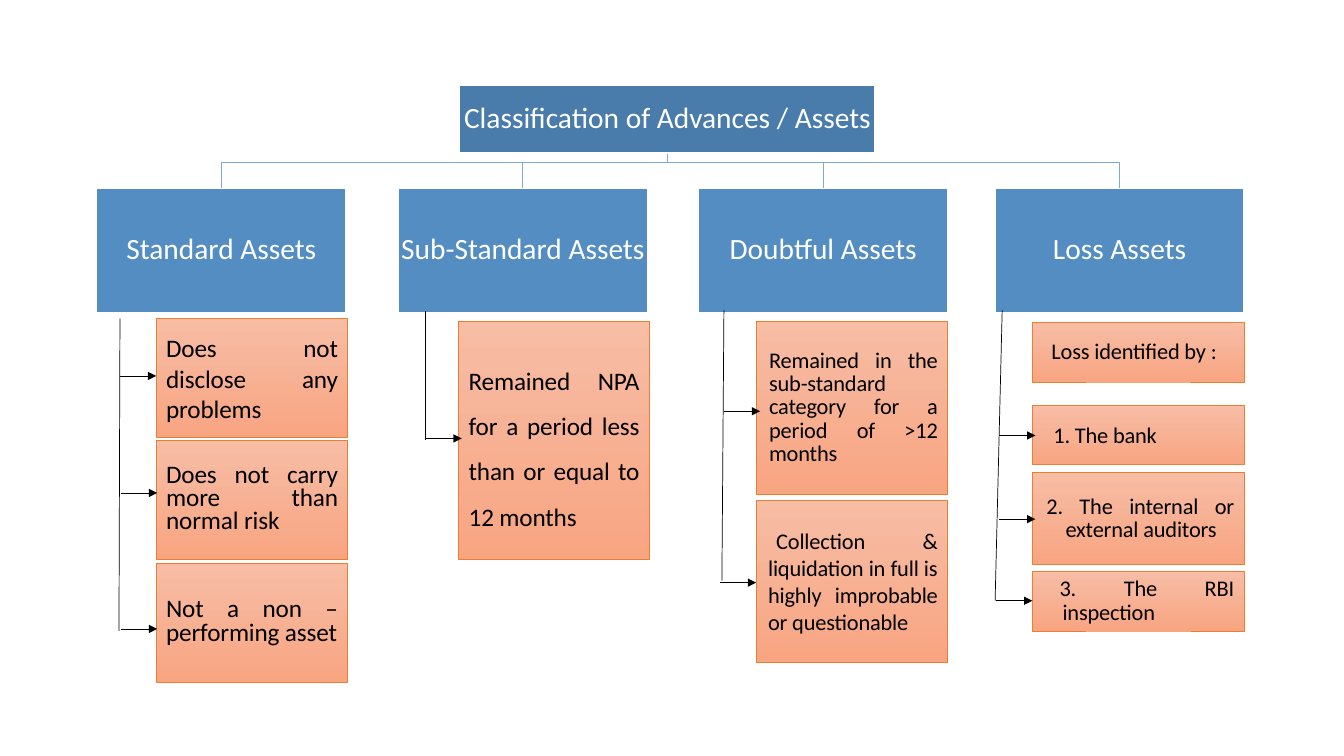
from pptx import Presentation
from pptx import util as u
from pptx.dml.color import RGBColor
from pptx.enum import shapes, text
from lxml import etree

# Content: each card is words, top, height, type size, then paragraph format
ROOT = "Classification of Advances / Assets"
TIGHT = {"line_spacing": u.Pt(16.6), "space_before": u.Pt(6.2)}
LOW = {"line_spacing": u.Pt(16.6), "space_before": u.Pt(8.4)}
COLS = [
    {"name": "Standard Assets", "left": 0.96, "card": (1.55, 1.9),
     "trunk": (1.19, 3.16, 1.18, 6.26),
     "arrows": [(1.19, 3.73), (1.2, 4.89), (1.2, 6.24)],
     "cards": [("Does not disclose any problems", 3.16, 1.18, 18, {}, (0, 0)),
               ("Does not carry more than normal risk", 4.37, 1.18, 18, TIGHT, (0, 0)),
               ("Not a non – performing asset", 5.59, 1.18, 18, TIGHT, (0, 0))]},
    {"name": "Sub-Standard Assets", "left": 3.95, "card": (4.55, 1.89),
     "trunk": (4.22, 3.09, 4.22, 4.37),
     "arrows": [(4.22, 4.35)],
     "cards": [("Remained NPA for a period less than or equal to 12 months", 3.19, 2.36, 18,
                {"line_spacing": 1.5, "space_before": u.Pt(6.2)}, (0, 0))]},
    {"name": "Doubtful Assets", "left": 6.93, "card": (7.5, 1.9),
     "trunk": (7.18, 3.08, 7.16, 5.76),
     "arrows": [(7.18, 4.08), (7.14, 5.78)],
     "cards": [("Remained in the sub-standard category for a period of >12 months", 3.19, 1.71, 16,
                {"line_spacing": u.Pt(16.6)}, (0.03, 0)),
               ("Collection & liquidation in full is highly improbable or questionable",
                4.96, 1.61, 16, {}, (0.02, 0.08))]},
    {"name": "Loss Assets", "left": 9.87, "card": (10.24, 2.1),
     "trunk": (9.94, 3.08, 9.87, 5.96),
     "arrows": [(9.91, 4.32), (9.91, 5.15), (9.88, 5.96)],
     "cards": [("Loss identified by :", 3.2, 0.59, 16, LOW, (0.62, -0.53)),
               ("1. The bank", 4.02, 0.59, 16, {"space_before": u.Pt(14)}, (0.11, 0)),
               ("2. The internal or external auditors", 4.69, 0.91, 16,
                {"line_spacing": u.Pt(16.6), "space_before": u.Pt(4.6)}, (0.23, -0.19)),
               ("3. The RBI inspection", 5.67, 0.59, 16, LOW, (0.2, -0.03))]},
]

# Theme and grid
THEME = {"font": "Calibri", "head": 21, "root": "497CAB", "col": "538DC1",
         "tree": "7AA9DA", "light": "FFFFFF", "dark": "000000",
         "edge": "ED7D31", "shade": ("F7BDA5", "F8A582")}
TOP = (4.56, 0.85, 4.12, 0.67)
ROW, WIDE, HIGH = 1.87, 2.47, 1.23
FORK, REACH = 1.61, 0.36

deck = Presentation()
deck.slide_width, deck.slide_height = u.Inches(13.33), u.Inches(7.5)
slide = deck.slides.add_slide(deck.slide_layouts[6])


def rgb(key):
    return RGBColor.from_string(THEME.get(key, key))


def apply(thing, form):
    for name, value in form.items():
        setattr(thing, name, value)


def edge(line, key, size):
    line.color.rgb = rgb(key)
    line.width = u.Pt(size)


def box(place, words, size, color, inset, form):
    shape = slide.shapes.add_shape(shapes.MSO_SHAPE.RECTANGLE, *map(u.Inches, place))
    shape.shadow.inherit = False
    side, end = map(u.Inches, inset)
    frame = shape.text_frame
    apply(frame, {"word_wrap": True, "vertical_anchor": text.MSO_ANCHOR.MIDDLE,
                  "margin_left": side, "margin_right": side,
                  "margin_top": end, "margin_bottom": end})
    para = frame.paragraphs[0]
    apply(para, form)
    run = para.add_run()
    run.text = words
    apply(run.font, {"name": THEME["font"], "size": u.Pt(size)})
    run.font.color.rgb = rgb(color)
    return shape, para, run


def head(place, words, key):
    shape, _, _ = box(place, words, THEME["head"], "light", (0.01, 0.01),
                      {"alignment": text.PP_ALIGN.CENTER, "line_spacing": 0.9})
    shape.fill.solid()
    shape.fill.fore_color.rgb = rgb(key)
    edge(shape.line, "light", 1)


def card(place, words, size, form, dent):
    shape, para, run = box(place, words, size, "dark", (0.1, 0.05),
                           {"alignment": text.PP_ALIGN.JUSTIFY, **form})
    shape.fill.gradient()
    shape.fill.gradient_angle = 270
    for stop, tone in zip(shape.fill.gradient_stops, THEME["shade"]):
        stop.color.rgb = rgb(tone)
    edge(shape.line, "edge", 0.5)
    # Indents and letter spacing
    props = para._p.get_or_add_pPr()
    for name, value in zip(("marL", "indent"), dent):
        props.set(name, str(u.Inches(value)))
    run._r.get_or_add_rPr().set("spc", "-10")


def link(ends, tip=False):
    wire = slide.shapes.add_connector(shapes.MSO_CONNECTOR.STRAIGHT, *map(u.Inches, ends))
    edge(wire.line, "dark", 0.5)
    props = wire._element.spPr
    space = "{" + props.nsmap["a"] + "}"
    if tip:
        etree.SubElement(wire.line._get_or_add_ln(), space + "tailEnd", type="triangle")
    etree.SubElement(props, space + "effectLst")


# Tree lines from the root to each column
mid, base = TOP[0] + TOP[2] / 2, TOP[1] + TOP[3]
for col in reversed(COLS):
    end = col["left"] + WIDE / 2
    path = [(mid, base), (mid, FORK), (end, FORK), (end, ROW)]
    points = [(u.Inches(x), u.Inches(y)) for x, y in path]
    build = slide.shapes.build_freeform(*points[0], scale=1.0)
    build.add_line_segments(points[1:], close=False)
    branch = build.convert_to_shape()
    branch.shadow.inherit = False
    branch.fill.background()
    edge(branch.line, "tree", 1)

# Headings
head(TOP, ROOT, "root")
for col in COLS:
    head((col["left"], ROW, WIDE, HIGH), col["name"], "col")

# Cards
for col in COLS:
    left, wide = col["card"]
    for words, top, high, size, form, dent in col["cards"]:
        card((left, top, wide, high), words, size, form, dent)

# Trunks and arrows
for col in COLS:
    link(col["trunk"])
    for x, y in col["arrows"]:
        link((x, y, x + REACH, y), tip=True)

deck.save("out.pptx")
